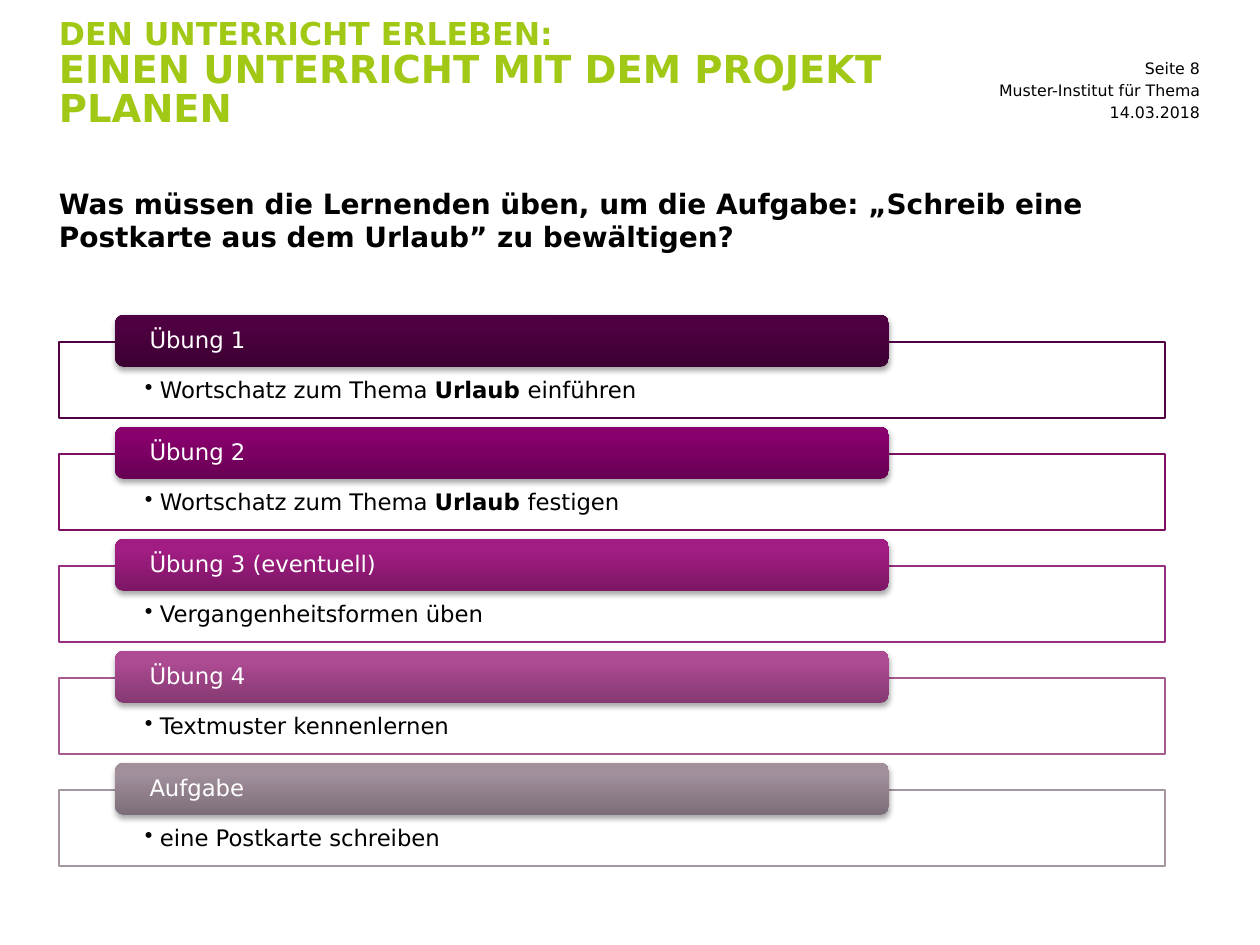
from dataclasses import dataclass

from lxml import etree
from pptx import Presentation
from pptx import util as u
from pptx.dml.color import RGBColor
from pptx.enum import shapes, text
from pptx.oxml import parse_xml
from pptx.oxml.ns import qn

PX = 914400 / 126
FONT = "DejaVu Sans"
BLACK, WHITE, GREEN = "000000", "FFFFFF", "A0C814"
SHADOW = (
    '<a:outerShdw xmlns:a="http://schemas.openxmlformats.org/drawingml/2006/main" '
    'blurRad="39370" dist="22860" dir="5400000" rotWithShape="0">'
    '<a:srgbClr val="000000"><a:alpha val="35000"/></a:srgbClr></a:outerShdw>'
)
FIRST_TOP, PITCH, BAR_RISE = 342, 112, 27


@dataclass
class Run:
    words: str
    bold: bool | None = None
    size: int | None = None


@dataclass
class Step:
    title: str
    runs: list[Run]
    outline: str
    dark: str
    light: str


STEPS = [
    Step("Übung 1", [Run("Wortschatz zum Thema "), Run("Urlaub ", True), Run("einführen")],
         "510043", "3C0032", "4E0041"),
    Step("Übung 2", [Run("Wortschatz zum Thema "), Run("Urlaub ", True), Run("festigen")],
         "7B1065", "680053", "87006C"),
    Step("Übung 3 (eventuell)", [Run("Vergangenheitsformen üben")],
         "982E7F", "7D1665", "A21D83"),
    Step("Übung 4", [Run("Textmuster kennenlernen")], "A75992", "853971", "AD4B93"),
    Step("Aufgabe", [Run("eine Postkarte schreiben")], "A495A0", "7C6E78", "A18F9C"),
]


def px(length: int) -> u.Emu:
    return u.Emu(round(length * PX))


def rgb(colour: str) -> RGBColor:
    return RGBColor.from_string(colour)


def write(shape, runs: list[Run], size: int, colour: str, bold: bool = False,
          insets: tuple[int, int, int, int] = (0, 0, 0, 0),
          anchor=text.MSO_ANCHOR.TOP, align=text.PP_ALIGN.LEFT,
          spacing: float | None = None, wrap: bool = True):
    frame = shape.text_frame
    frame.word_wrap = wrap
    frame.vertical_anchor = anchor
    frame.margin_left, frame.margin_top, frame.margin_right, frame.margin_bottom = map(px, insets)
    paragraph = frame.paragraphs[0]
    paragraph.alignment = align
    paragraph.line_spacing = spacing
    font = paragraph.font
    font.name, font.size, font.bold = FONT, u.Pt(size), bold
    font.color.rgb = rgb(colour)
    for index, item in enumerate(runs):
        if index and item.size:
            paragraph.add_line_break()
        run = paragraph.add_run()
        run.text = item.words
        if item.bold is not None:
            run.font.bold = item.bold
        if item.size:
            run.font.size = u.Pt(item.size)
    return paragraph


def add_text(slide, box: tuple[int, int, int, int], runs: list[Run], size: int,
             colour: str, **style) -> None:
    write(slide.shapes.add_textbox(*map(px, box)), runs, size, colour, **style)


def add_bullet(paragraph) -> None:
    properties = paragraph._p.get_or_add_pPr()
    properties.set("marL", str(px(15)))
    properties.set("indent", str(-px(15)))
    bullet = etree.Element(qn("a:buChar"), char="•")
    properties.find(qn("a:defRPr")).addprevious(bullet)


def add_step(slide, step: Step, top: int) -> None:
    box = slide.shapes.add_shape(shapes.MSO_SHAPE.RECTANGLE, *map(px, (59, top, 1106, 76)))
    box.shadow.inherit = False
    box.fill.solid()
    box.fill.fore_color.rgb = rgb(WHITE)
    box.line.color.rgb = rgb(step.outline)
    box.line.width = u.Pt(0.75)
    add_bullet(write(box, step.runs, 13, BLACK, insets=(86, 37, 86, 13), spacing=0.9))

    bar = slide.shapes.add_shape(shapes.MSO_SHAPE.ROUNDED_RECTANGLE,
                                 *map(px, (115, top - BAR_RISE, 774, 52)))
    bar.shadow.inherit = False
    bar._element.spPr.find(qn("a:effectLst")).append(parse_xml(SHADOW))
    bar.line.fill.background()
    bar.fill.gradient()
    bar.fill.gradient_angle = 90
    for stop, position, colour in zip(bar.fill.gradient_stops, (0, 0.8), (step.dark, step.light)):
        stop.position = position
        stop.color.rgb = rgb(colour)
    write(bar, [Run(step.title)], 13, WHITE, insets=(32, 0, 32, 0),
          anchor=text.MSO_ANCHOR.MIDDLE, spacing=0.9)


def main() -> None:
    presentation = Presentation()
    presentation.slide_width, presentation.slide_height = u.Inches(10), u.Inches(7.5)
    slide = presentation.slides.add_slide(presentation.slide_layouts[6])

    add_text(slide, (59, 20, 917, 121),
             [Run("DEN UNTERRICHT ERLEBEN:", size=18),
              Run("EINEN UNTERRICHT MIT DEM PROJEKT PLANEN", size=22)],
             18, GREEN, bold=True, spacing=0.85)
    add_text(slide, (59, 186, 1142, 79),
             [Run("Was müssen die Lernenden üben, um die Aufgabe: "
                  "„Schreib eine Postkarte aus dem Urlaub” zu bewältigen?")],
             16, BLACK, bold=True)
    for index, words in enumerate(("Seite 8", "Muster-Institut für Thema", "14.03.2018")):
        add_text(slide, (922, 58 + 22 * index, 278, 20), [Run(words)], 9, BLACK,
                 anchor=text.MSO_ANCHOR.MIDDLE, align=text.PP_ALIGN.RIGHT, wrap=False)
    for index, step in enumerate(STEPS):
        add_step(slide, step, FIRST_TOP + PITCH * index)

    presentation.save("out.pptx")


if __name__ == "__main__":
    main()
